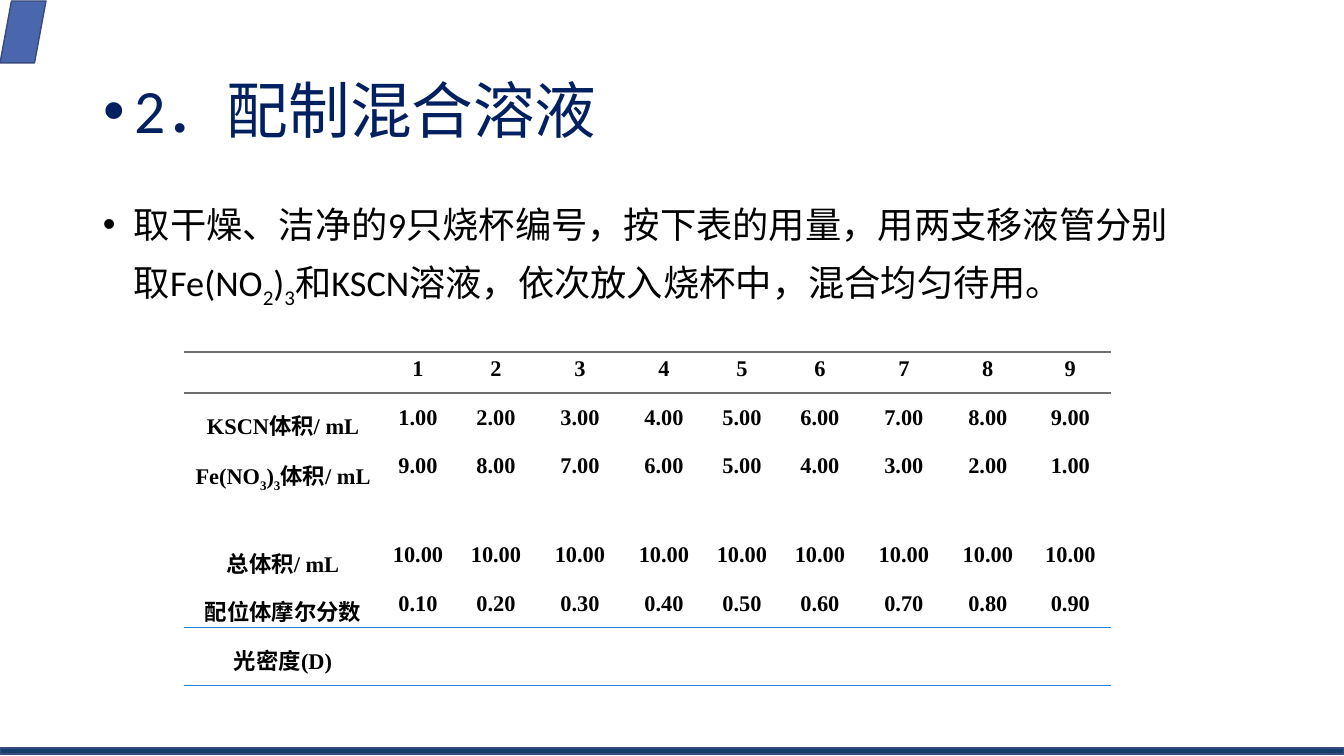
from dataclasses import dataclass

from lxml import etree
from pptx import Presentation
from pptx import util as u
from pptx.dml import color
from pptx.enum import shapes, text
from pptx.oxml import ns

PX = 914400 / 100.8


@dataclass(frozen=True)
class Theme:
    navy: str = "002060"
    black: str = "000000"
    bar: str = "143F6A"
    tab: str = "4A66AC"
    edge: str = "374B7F"
    gray: str = "6E6E6E"
    blue: str = "297FD5"
    sans: str = "Calibri"
    serif: str = "Times New Roman"
    head: float = 44
    body: float = 25.9
    cell: float = 16


@dataclass(frozen=True)
class Box:
    x: int
    y: int
    w: int
    h: int

    def emu(self) -> tuple:
        return tuple(px(n) for n in (self.x, self.y, self.w, self.h))


@dataclass(frozen=True)
class Decor:
    kind: int
    box: Box
    fill: str


@dataclass(frozen=True)
class Style:
    font: str
    size: float
    hue: str
    bold: bool = False


@dataclass(frozen=True)
class Row:
    high: int
    label: tuple
    vals: tuple
    space: float = 1.5
    rule: str = ""


T = Theme()
TITLE = Style(T.sans, T.head, T.navy)
BODY = Style(T.sans, T.body, T.black)
CELL = Style(T.serif, T.cell, T.black, True)
PLAIN = "{2D5ABB26-0587-4C30-8999-92F81FD0307C}"

DECOR = (
    Decor(shapes.MSO_SHAPE.RECTANGLE, Box(0, 748, 1344, 6), T.bar),
    Decor(shapes.MSO_SHAPE.PARALLELOGRAM, Box(0, 1, 46, 62), T.tab),
)
NUMS = range(1, 10)
COLS = (198, 72, 84, 84, 84, 72, 84, 84, 84, 81)
ROWS = (
    Row(41, (), tuple(str(n) for n in NUMS), 1.2, T.gray),
    Row(37, ("KSCN体积/ mL",), tuple(f"{n:.2f}" for n in NUMS)),
    Row(45, ("Fe(NO", "3", ")", "3", "体积/ mL"),
        tuple(f"{10 - n:.2f}" for n in NUMS)),
    Row(43, ("总体积/ mL",), ("10.00",) * 9),
    Row(49, ("配位体摩尔分数",), tuple(f"{n / 10:.2f}" for n in NUMS)),
    Row(58, ("光密度(D)",), ("",) * 9, rule=T.blue),
)


def px(n: float) -> int:
    return u.Emu(round(n * PX))


def rgb(hue: str) -> color.RGBColor:
    return color.RGBColor.from_string(hue)


def write(para, parts: tuple, style: Style) -> None:
    for i, part in enumerate(parts):
        run = para.add_run()
        run.text = part
        font = run.font
        font.name, font.size, font.bold = style.font, u.Pt(style.size), style.bold
        font.color.rgb = rgb(style.hue)
        if i % 2:
            run._r.get_or_add_rPr().set("baseline", "-25000")


def bullet(para, space: float) -> None:
    para.alignment = text.PP_ALIGN.LEFT
    para.line_spacing = space
    props = para._p.get_or_add_pPr()
    props.set("marL", str(px(31)))
    props.set("indent", str(-px(31)))
    etree.SubElement(props, ns.qn("a:buFont"), typeface="Arial")
    etree.SubElement(props, ns.qn("a:buChar"), char="•")


def decorate(slide, item: Decor) -> None:
    shape = slide.shapes.add_shape(item.kind, *item.box.emu())
    shape.shadow.inherit = False
    shape.fill.solid()
    shape.fill.fore_color.rgb = rgb(item.fill)
    shape.line.color.rgb = rgb(T.edge)
    shape.line.width = u.Pt(1)


def prose(shape, box: Box, parts: tuple, style: Style, space: float,
          anchor: int) -> None:
    shape.left, shape.top, shape.width, shape.height = box.emu()
    frame = shape.text_frame
    frame.word_wrap = True
    frame.auto_size = text.MSO_AUTO_SIZE.NONE
    frame.vertical_anchor = anchor
    para = frame.paragraphs[0]
    bullet(para, space)
    write(para, parts, style)


def border(cell, hue: str) -> None:
    props = cell._tc.get_or_add_tcPr()
    for i, side in enumerate(("a:lnT", "a:lnB")):
        line = etree.Element(ns.qn(side), w=str(u.Pt(1)))
        fill = etree.SubElement(line, ns.qn("a:solidFill"))
        etree.SubElement(fill, ns.qn("a:srgbClr"), val=hue)
        props.insert(i, line)


def fill_cell(cell, parts: tuple, row: Row) -> None:
    cell.fill.background()
    if any(parts):
        cell.margin_left = cell.margin_right = px(7)
        cell.margin_top = cell.margin_bottom = 0
        para = cell.text_frame.paragraphs[0]
        para.alignment = text.PP_ALIGN.CENTER
        para.line_spacing = row.space
        write(para, parts, CELL)
    if row.rule:
        border(cell, row.rule)


def grid(slide, x: int, y: int) -> None:
    box = Box(x, y, sum(COLS), sum(r.high for r in ROWS))
    frame = slide.shapes.add_table(len(ROWS), len(COLS), *box.emu())
    table = frame.table
    table.first_row = table.horz_banding = False
    for mark in frame.element.iter(ns.qn("a:tableStyleId")):
        mark.text = PLAIN
    for col, wide in zip(table.columns, COLS):
        col.width = px(wide)
    for line, row in zip(table.rows, ROWS):
        line.height = px(row.high)
        items = (row.label, *((val,) for val in row.vals))
        for cell, parts in zip(line.cells, items):
            fill_cell(cell, parts, row)


def main() -> None:
    deck = Presentation()
    deck.slide_width, deck.slide_height = px(1344), px(756)
    slide = deck.slides.add_slide(deck.slide_layouts[5])
    for item in DECOR:
        decorate(slide, item)
    prose(slide.shapes.title, Box(93, 75, 1159, 78), ("2．配制混合溶液",),
          TITLE, 0.9, text.MSO_ANCHOR.MIDDLE)
    box = Box(93, 184, 1108, 122)
    lead = ("取干燥、洁净的9只烧杯编号，按下表的用量，用两支移液管分别取Fe(NO",
            "2", ")", "3", "和KSCN溶液，依次放入烧杯中，混合均匀待用。")
    prose(slide.shapes.add_textbox(*box.emu()), box, lead, BODY, 1.3,
          text.MSO_ANCHOR.TOP)
    grid(slide, 184, 352)
    deck.save("out.pptx")


if __name__ == "__main__":
    main()
